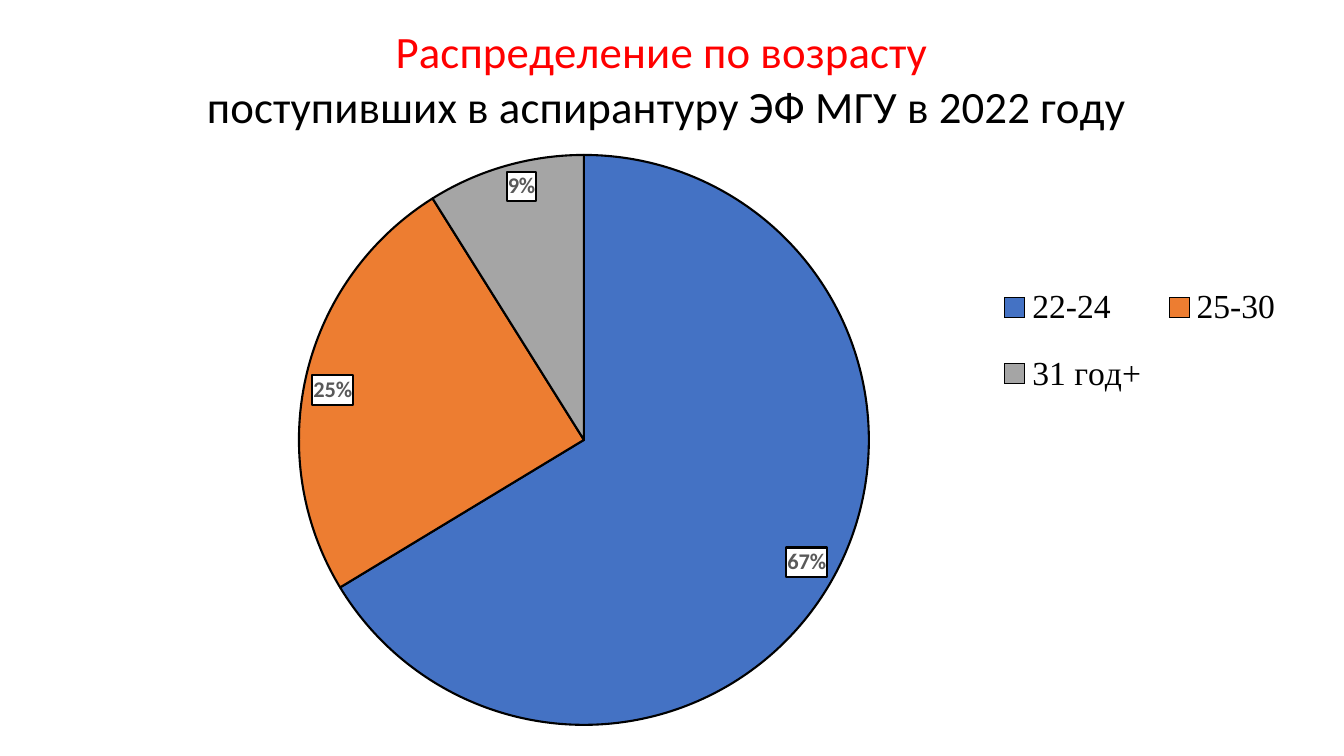
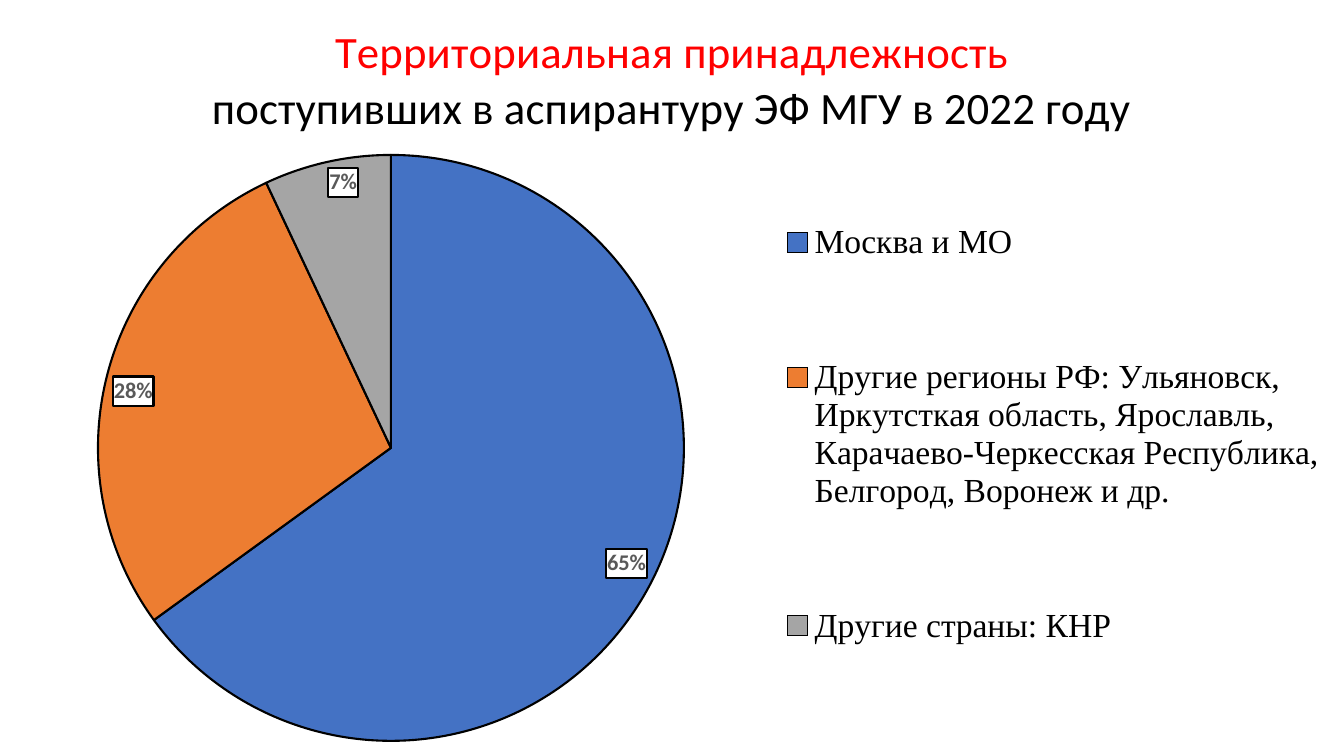
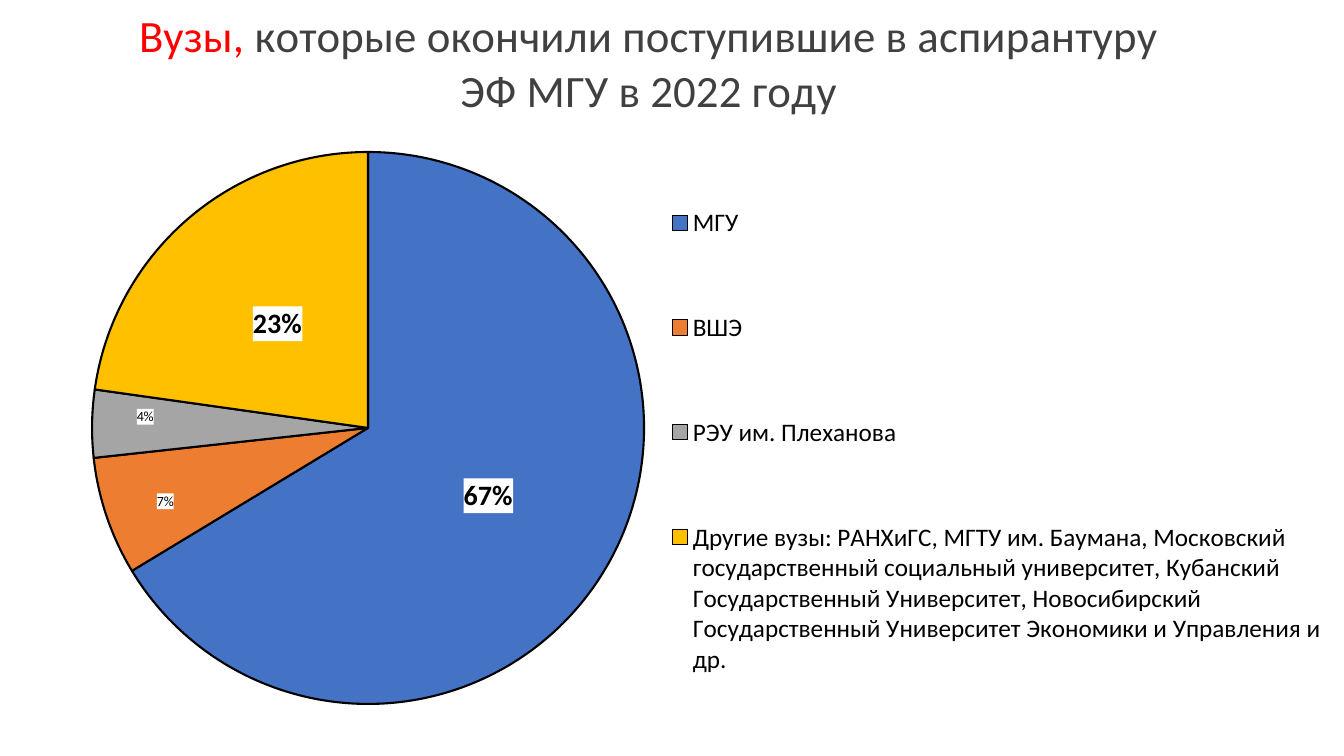
from copy import deepcopy

from lxml import etree
from pptx import Presentation
from pptx.chart.data import CategoryChartData
from pptx.dml.color import RGBColor
from pptx.enum.chart import XL_CHART_TYPE, XL_LABEL_POSITION, XL_LEGEND_POSITION
from pptx.oxml import parse_xml
from pptx.oxml.ns import nsdecls, qn
from pptx.util import Emu, Pt

PIE = XL_CHART_TYPE.PIE
CENTER, INSIDE_END = XL_LABEL_POSITION.CENTER, XL_LABEL_POSITION.INSIDE_END
RIGHT, CORNER = XL_LEGEND_POSITION.RIGHT, XL_LEGEND_POSITION.CORNER

PAGE_WIDTH, PAGE_HEIGHT = 1344, 756
EMU_PER_PX = 12192000 / PAGE_WIDTH

COLORS = {
    "red": "FF0000", "black": "000000", "dark": "404040", "gray": "595959",
    "white": "FFFFFF",
}
SLICE_COLORS = ["4472C4", "ED7D31", "A5A5A5", "FFC000"]
ADMITTED = "поступивших в аспирантуру ЭФ МГУ в 2022 году"

SMALL_LABEL = {"size": 16, "color": "gray", "position": INSIDE_END, "border": "black"}
LARGE_LABEL = {"size": 20, "color": "black", "position": CENTER, "border": None}
SERIF_LEGEND = {"position": RIGHT, "size": 24, "font": "Times New Roman"}
SANS_LEGEND = {"position": CORNER, "size": 18, "font": "Calibri"}

# Boxes are (left, top, width, height) in px; label shifts are (right, down).
SLIDES = [
    {
        "title": [[("Распределение по возрасту ", "red")], [(ADMITTED, "black")]],
        "size": (1334, 739),
        "slices": [("22-24", 67), ("25-30", 25), ("31 год+", 9)],
        "pie_box": (299, 155, 570, 570),
        "legend_box": (988, 260, 304, 161),
        "label": SMALL_LABEL, "legend": SERIF_LEGEND,
    },
    {
        "title": [[("Территориальная принадлежность", "red")], [(ADMITTED, "black")]],
        "size": (PAGE_WIDTH, PAGE_HEIGHT),
        "slices": [
            ("Москва и МО", 65),
            ("Другие регионы РФ: Ульяновск, Иркутсткая область, Ярославль, "
             "Карачаево-Черкесская Республика, Белгород, Воронеж и др.", 28),
            ("Другие страны: КНР", 7),
        ],
        "pie_box": (98, 155, 586, 586),
        "legend_box": (762, 126, 582, 616),
        "label": SMALL_LABEL, "legend": SERIF_LEGEND,
    },
    {
        "title": [
            [("Вузы,", "red"), (" которые окончили поступившие в аспирантуру", "dark")],
            [("ЭФ МГУ в 2022 году", "dark")],
        ],
        "title_at": (136, 4),
        "size": (PAGE_WIDTH, PAGE_HEIGHT),
        "slices": [
            ("МГУ", 67),
            ("ВШЭ", 7),
            ("РЭУ им. Плеханова", 4),
            ("Другие вузы: РАНХиГС, МГТУ им. Баумана, Московский государственный "
             "социальный университет, Кубанский Государственный Университет, "
             "Новосибирский Государственный Университет Экономики и Управления "
             "и др.", 23),
        ],
        "pie_box": (92, 152, 552, 552),
        "legend_box": (655, 133, 683, 616),
        "label": LARGE_LABEL, "legend": SANS_LEGEND,
        "label_shifts": {1: (-72, 29), 2: (-85, -9)},
    },
]


def px(length):
    return Emu(round(length * EMU_PER_PX))


def rgb(name):
    return RGBColor.from_string(COLORS[name])


def style_font(font, size, color, name="Calibri", bold=False):
    font.color.rgb = rgb(color)
    for key, value in {"size": Pt(size), "name": name, "bold": bold}.items():
        setattr(font, key, value)


def set_layout(parent, box, chart_size, after=None, inner=False, edge=True):
    """Place a chart part by hand, following the child tag named by after."""
    for old in parent.findall(qn("c:layout")):
        parent.remove(old)
    layout = parse_xml(f"<c:layout {nsdecls('c')}><c:manualLayout/></c:layout>")
    values = {}
    if inner:
        values["layoutTarget"] = "inner"
    if edge:
        values.update(xMode="edge", yMode="edge")
    for index, (key, length) in enumerate(zip("xywh", box)):
        values[key] = f"{length / chart_size[index % 2]:.4f}"
    for key, value in values.items():
        etree.SubElement(layout[0], qn(f"c:{key}")).set("val", value)
    if after:
        parent.find(qn(after)).addnext(layout)
    else:
        parent.insert(0, layout)
    return layout


def add_title(chart, content):
    chart.has_title = True
    title = chart.chart_title
    frame = title.text_frame
    for index, line in enumerate(content["title"]):
        para = frame.add_paragraph() if index else frame.paragraphs[0]
        for text, color in line:
            span = para.add_run()
            span.text = text
            style_font(span.font, 32, color)
    if "title_at" in content:
        set_layout(title._element, content["title_at"], content["size"], "c:tx")


def add_legend(chart, content):
    look = content["legend"]
    chart.has_legend = True
    legend = chart.legend
    legend.position = look["position"]
    legend.include_in_layout = False
    style_font(legend.font, look["size"], "black", look["font"])
    set_layout(legend._element, content["legend_box"], content["size"], "c:legendPos")


def label_box(border):
    line = "<a:noFill/>"
    if border:
        line = f'<a:solidFill><a:srgbClr val="{COLORS[border]}"/></a:solidFill>'
    return parse_xml(
        f"<c:spPr {nsdecls('c', 'a')}><a:solidFill>"
        f'<a:srgbClr val="{COLORS["white"]}"/></a:solidFill>'
        f'<a:ln w="19050">{line}</a:ln></c:spPr>')


def add_labels(series, content):
    look = content["label"]
    labels = series.data_labels
    labels.show_value = True
    labels.show_percentage = False
    labels.number_format = '0"%"'
    labels.number_format_is_linked = False
    labels.position = look["position"]
    style_font(labels.font, look["size"], look["color"], bold=True)
    root = labels._element
    root.find(qn("c:numFmt")).addnext(label_box(look["border"]))
    for index, shift in content.get("label_shifts", {}).items():
        series.points[index].data_label.position = look["position"]
        label = root.findall(qn("c:dLbl"))[-1]
        last = set_layout(label, shift, content["size"], "c:idx", edge=False)
        for tag in ("c:numFmt", "c:spPr", "c:txPr"):
            part = deepcopy(root.find(qn(tag)))
            last.addnext(part)
            last = part


def add_pie(page, content):
    names, values = zip(*content["slices"])
    data = CategoryChartData()
    data.categories = names
    data.add_series("Series 1", values)
    width, height = content["size"]
    chart = page.shapes.add_chart(PIE, 0, 0, px(width), px(height), data).chart
    style_font(chart.font, 10, "black")
    plot = chart.plots[0]
    plot.vary_by_categories = True
    series = plot.series[0]
    for index in range(len(values)):
        look = series.points[index].format
        look.fill.solid()
        look.fill.fore_color.rgb = RGBColor.from_string(SLICE_COLORS[index])
        look.line.color.rgb = rgb("black")
        look.line.width = Pt(1.5)
    add_labels(series, content)
    add_title(chart, content)
    add_legend(chart, content)
    plot_area = chart._chartSpace.find(".//" + qn("c:plotArea"))
    set_layout(plot_area, content["pie_box"], content["size"], inner=True)


def main():
    deck = Presentation()
    deck.slide_width, deck.slide_height = px(PAGE_WIDTH), px(PAGE_HEIGHT)
    for content in SLIDES:
        add_pie(deck.slides.add_slide(deck.slide_layouts[6]), content)
    deck.save("out.pptx")


if __name__ == "__main__":
    main()
